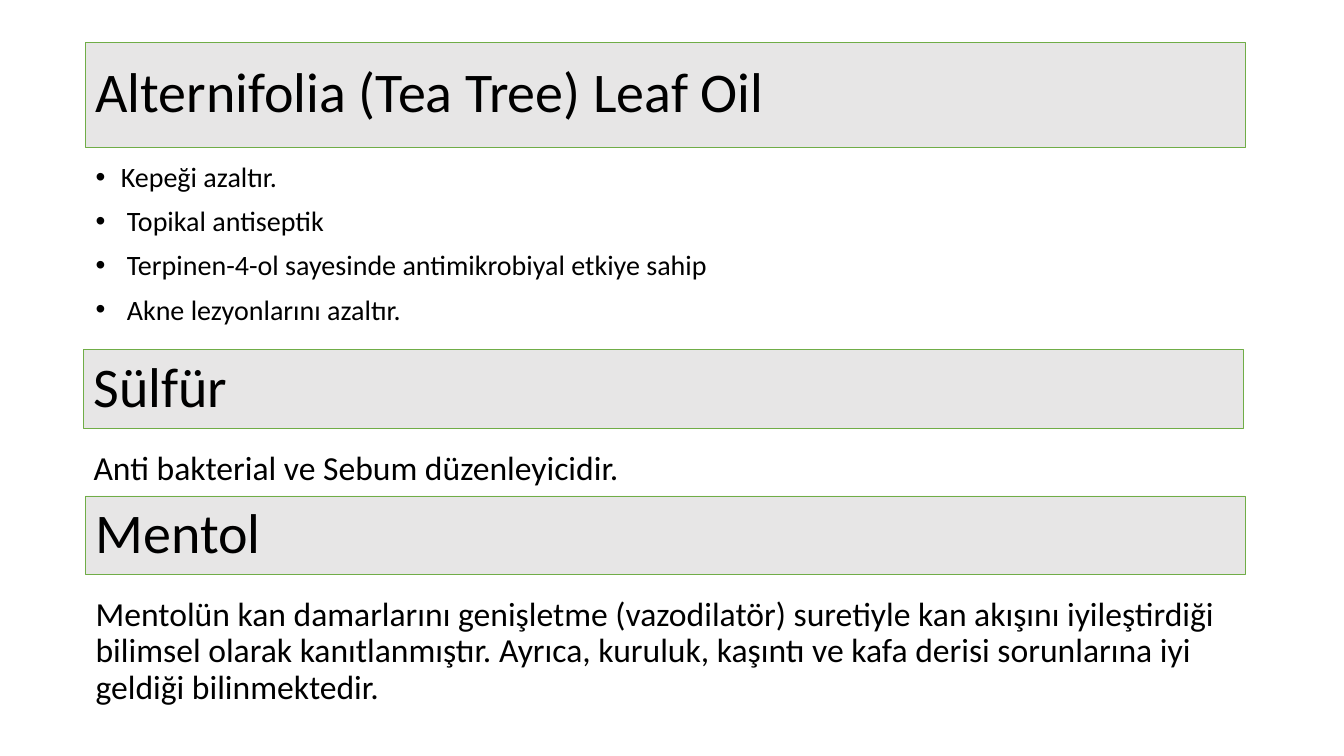
from pptx import Presentation
from pptx.dml.color import RGBColor
from pptx.enum.shapes import MSO_SHAPE as Shape
from pptx.enum.text import MSO_ANCHOR as Anchor, PP_ALIGN as Align
from pptx.oxml.ns import qn
from pptx.util import Inches, Pt
from lxml import etree

FONT = "Calibri"
WIDTH = 11.5

# left, heading top, heading height, heading, body top, body height, body size, lines, bullet indents
SECTIONS = [
    (0.85, 0.42, 1.04, "Alternifolia (Tea Tree) Leaf Oil", 1.57, 2.04, 20,
     ["Kepeği azaltır.", "Topikal antiseptik",
      "Terpinen-4-ol sayesinde antimikrobiyal etkiye sahip",
      "Akne lezyonlarını azaltır."], [0.25, 0.31, 0.31, 0.31]),
    (0.83, 3.47, 0.78, "Sülfür", 4.43, 0.53, 24,
     ["Anti bakterial ve Sebum düzenleyicidir."], []),
    (0.85, 4.92, 0.78, "Mentol", 5.88, 1.31, 24,
     ["Mentolün kan damarlarını genişletme (vazodilatör) suretiyle kan akışını "
      "iyileştirdiği bilimsel olarak kanıtlanmıştır. Ayrıca, kuruluk, kaşıntı ve "
      "kafa derisi sorunlarına iyi geldiği bilinmektedir."], []),
]


def color(value):
    return RGBColor.from_string(value)


def write_paragraph(paragraph, text, size):
    paragraph.text = text
    paragraph.alignment = Align.LEFT
    paragraph.line_spacing = 0.9
    paragraph.font.name = FONT
    paragraph.font.size = Pt(size)
    paragraph.font.color.rgb = color("000000")


def add_bullet(paragraph, indent):
    """Give the paragraph a round bullet with a hanging indent in inches."""
    properties = paragraph._p.get_or_add_pPr()
    properties.set("marL", str(Inches(indent)))
    properties.set("indent", str(-Inches(indent)))
    etree.SubElement(properties, qn("a:buFont")).set("typeface", "Arial")
    etree.SubElement(properties, qn("a:buChar")).set("char", "•")
    # Default run properties follow the bullet in the schema order
    properties.append(properties.find(qn("a:defRPr")))


def add_heading(slide, left, top, width, height, text):
    bar = slide.shapes.add_shape(
        Shape.RECTANGLE, Inches(left), Inches(top), Inches(width), Inches(height))
    bar.shadow.inherit = False
    bar.fill.solid()
    bar.fill.fore_color.rgb = color("E7E6E6")
    bar.line.color.rgb = color("70AD47")
    bar.line.width = Pt(0.5)
    bar.text_frame.word_wrap = True
    bar.text_frame.vertical_anchor = Anchor.MIDDLE
    write_paragraph(bar.text_frame.paragraphs[0], text, 40)


def add_body(slide, left, top, width, height, size, lines, indents):
    box = slide.shapes.add_textbox(
        Inches(left), Inches(top), Inches(width), Inches(height))
    frame = box.text_frame
    frame.word_wrap = True
    for number, line in enumerate(lines):
        paragraph = frame.add_paragraph() if number else frame.paragraphs[0]
        write_paragraph(paragraph, line, size)
        paragraph.space_before = Pt(10)
        if indents:
            add_bullet(paragraph, indents[number])


def main():
    presentation = Presentation()
    presentation.slide_width = Inches(13.33)
    presentation.slide_height = Inches(7.5)
    slide = presentation.slides.add_slide(presentation.slide_layouts[6])
    for (left, bar_top, bar_height, heading,
         body_top, body_height, size, lines, indents) in SECTIONS:
        add_heading(slide, left, bar_top, WIDTH, bar_height, heading)
        add_body(slide, left, body_top, WIDTH, body_height, size, lines, indents)
    presentation.save("out.pptx")


if __name__ == "__main__":
    main()
